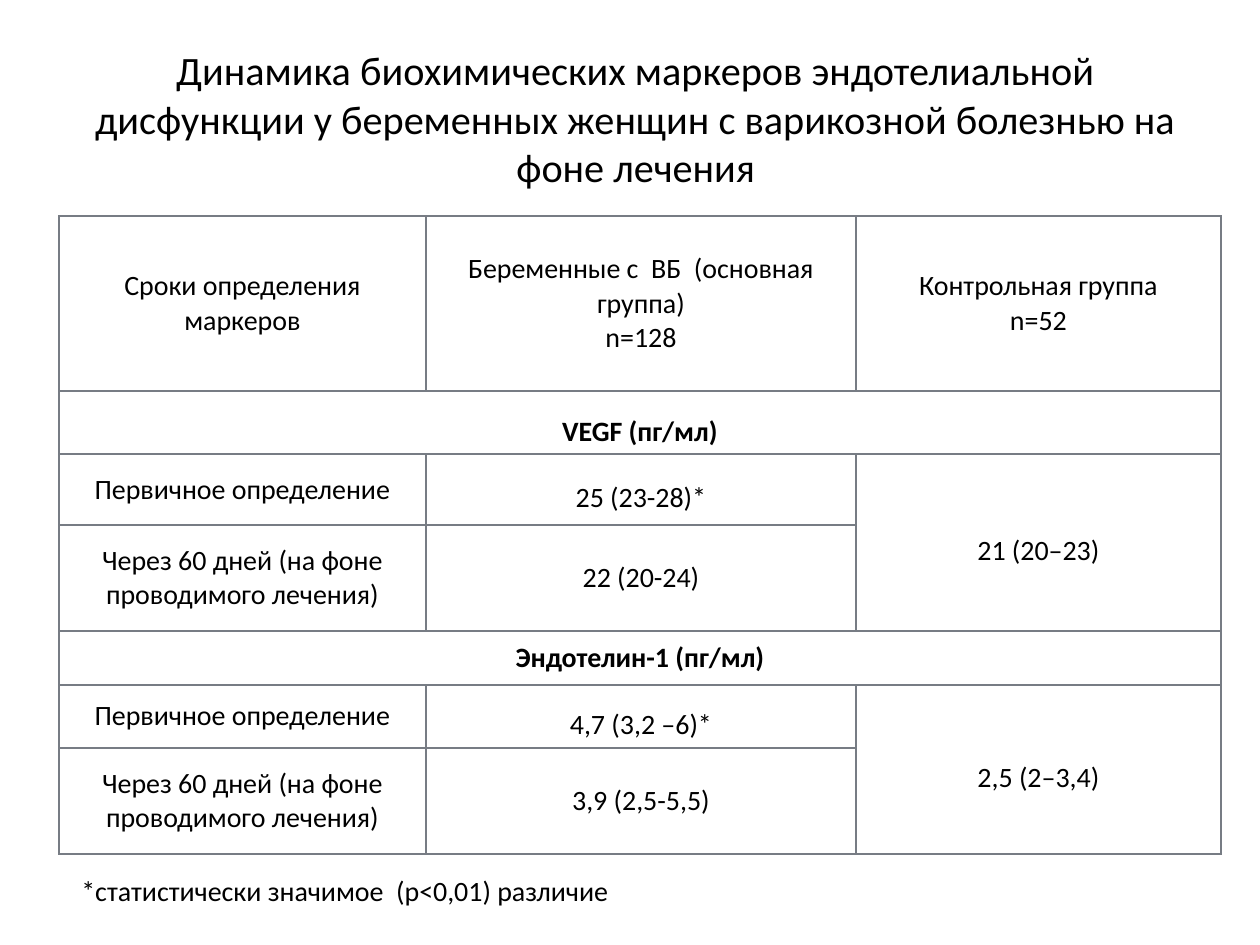
from lxml.etree import SubElement
from pptx import Presentation
from pptx.dml.color import RGBColor
from pptx.enum.text import MSO_ANCHOR, MSO_AUTO_SIZE, PP_ALIGN
from pptx.oxml.ns import qn
from pptx.util import Pt

SCALE = 914400 / 126
BLACK, WHITE, GREY = "000000", "FFFFFF", "777C84"
TITLE = ("Динамика биохимических маркеров эндотелиальной дисфункции "
         "у беременных женщин с варикозной болезнью на фоне лечения")
NOTE = "*статистически значимое  (р<0,01) различие"
HEADS = ["Сроки определения маркеров",
         "Беременные с  ВБ  (основная группа)\nn=128",
         "Контрольная группа\nn=52"]
FIRST = "Первичное определение"
LATER = "Через 60 дней (на фоне проводимого лечения)"
MARKERS = [
    ("VEGF (пг/мл)", "25 (23-28)*", "22 (20-24)", "21 (20–23)"),
    ("Эндотелин-1 (пг/мл)", "4,7 (3,2 –6)*", "3,9 (2,5-5,5)", "2,5 (2–3,4)"),
]
COLS = [367, 430, 365]
ROWS = [175, 63, 71, 106, 54, 63, 106]
WIDE = {"line_spacing": 1.5}
TALL = {"line_spacing": 1.5, "space_after": Pt(6)}


def px(size):
    """Turn px into EMU."""
    return round(size * SCALE)


def color(code):
    """Turn a hex string into a colour."""
    return RGBColor.from_string(code)


def apply(item, values):
    """Set each named value on an item."""
    for name, value in values.items():
        setattr(item, name, value)


def write(frame, text, size=16, bold=False, align=PP_ALIGN.CENTER, **spacing):
    """Put one formatted paragraph in a frame."""
    para = frame.paragraphs[0]
    para.text = text
    apply(para, {"alignment": align, **spacing})
    for run in para.runs:
        apply(run.font, {"name": "Calibri", "size": Pt(size), "bold": bold})
        run.font.color.rgb = color(BLACK)


def place(shape, left, top, width, height):
    """Move and size a shape in px."""
    apply(shape, {"left": px(left), "top": px(top),
                  "width": px(width), "height": px(height)})


def add_title(slide):
    """Fill the title placeholder."""
    title = slide.shapes.title
    place(title, 69, 39, 1134, 158)
    apply(title.text_frame, {"word_wrap": True,
                             "auto_size": MSO_AUTO_SIZE.NONE,
                             "vertical_anchor": MSO_ANCHOR.MIDDLE})
    write(title.text_frame, TITLE, size=23)


def add_note(slide):
    """Add the footnote under the table."""
    box = slide.shapes.add_textbox(px(69), px(867), px(581), px(47))
    apply(box.text_frame, {"word_wrap": True,
                           "auto_size": MSO_AUTO_SIZE.SHAPE_TO_FIT_TEXT})
    write(box.text_frame, NOTE, align=PP_ALIGN.LEFT)


def style(cell):
    """Give a cell grey borders and a white fill."""
    props = cell._tc.get_or_add_tcPr()
    for side in ("lnL", "lnR", "lnT", "lnB"):
        line = SubElement(props, qn(f"a:{side}"), w=str(Pt(1)))
        fill = SubElement(line, qn("a:solidFill"))
        SubElement(fill, qn("a:srgbClr"), val=GREY)
    cell.fill.solid()
    cell.fill.fore_color.rgb = color(WHITE)
    cell.vertical_anchor = MSO_ANCHOR.MIDDLE


def add_group(table, top, marker):
    """Write one marker's heading and its two rows."""
    name, before, after, control = marker
    table.cell(top, 0).merge(table.cell(top, 2))
    table.cell(top + 1, 2).merge(table.cell(top + 2, 2))
    heading = WIDE if top == 1 else {}
    for row, col, text, form in (
        (0, 0, name, {"bold": True, **heading}),
        (1, 0, FIRST, {}),
        (1, 1, before, WIDE),
        (1, 2, control, TALL),
        (2, 0, LATER, {}),
        (2, 1, after, {}),
    ):
        write(table.cell(top + row, col).text_frame, text, **form)


def add_grid(slide):
    """Add the table of markers."""
    table = slide.shapes.add_table(
        len(ROWS), len(COLS), px(59), px(216),
        px(sum(COLS)), px(sum(ROWS))).table
    apply(table, {"first_row": False, "horz_banding": False})
    for col, width in zip(table.columns, COLS):
        col.width = px(width)
    for row, height in zip(table.rows, ROWS):
        row.height = px(height)
    for cell in table.iter_cells():
        style(cell)
    for col, text in enumerate(HEADS):
        write(table.cell(0, col).text_frame, text)
    for index, marker in enumerate(MARKERS):
        add_group(table, 1 + 3 * index, marker)


def main():
    """Build the slide and save it."""
    deck = Presentation()
    apply(deck, {"slide_width": px(1260), "slide_height": px(945)})
    slide = deck.slides.add_slide(deck.slide_layouts[5])
    add_title(slide)
    add_note(slide)
    add_grid(slide)
    deck.save("out.pptx")


if __name__ == "__main__":
    main()
